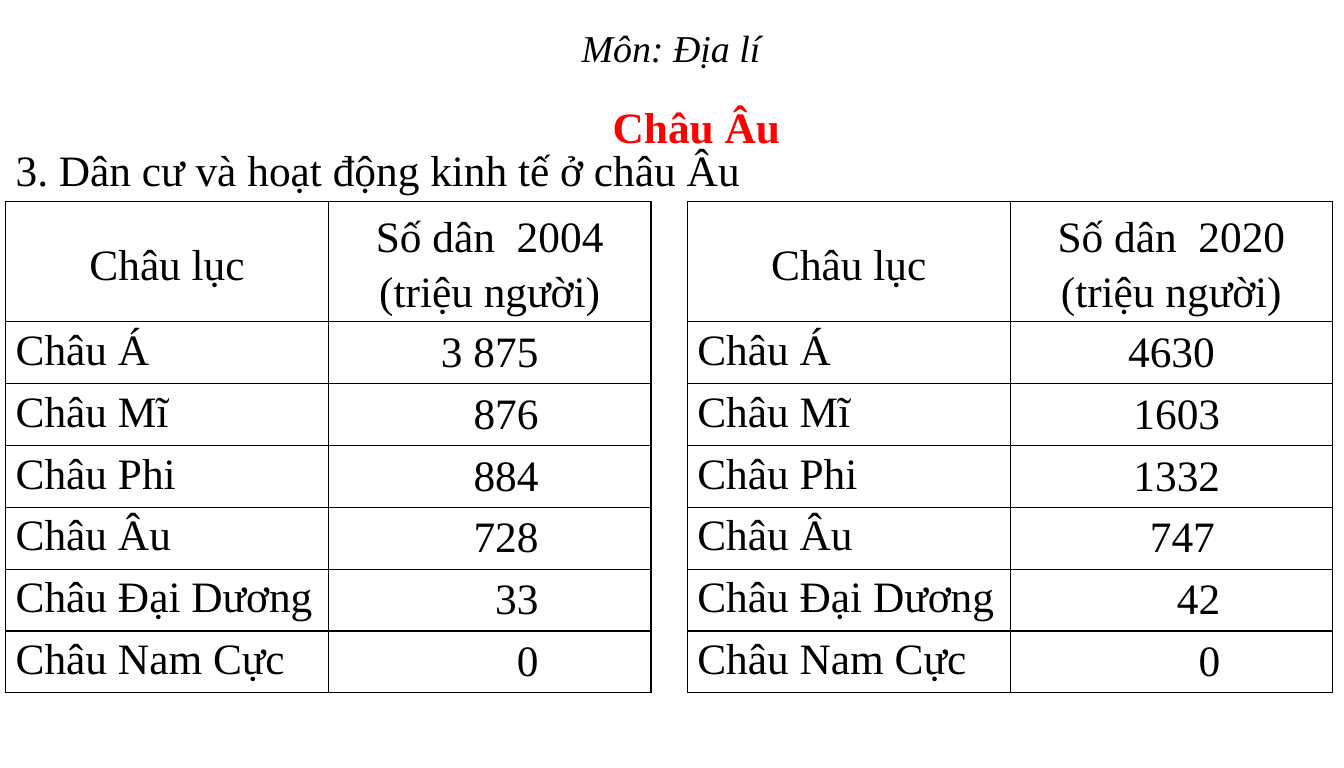
from dataclasses import dataclass
from lxml.etree import SubElement
from pptx import Presentation
from pptx.dml.color import RGBColor
from pptx.enum.text import MSO_ANCHOR, MSO_AUTO_SIZE, PP_ALIGN
from pptx.oxml.ns import qn
from pptx.util import Emu, Pt

FONT = "Times New Roman"
BLACK = "000000"
RED = "FF0000"
WIDE = Pt(992.25)
HIGH = Pt(567)
HEAD = 15.62
ROW = 8.05
COL = 24
TOP = 26.29
SLIP = 0.4
LANDS = ["Châu Á", "Châu Mĩ", "Châu Phi", "Châu Âu", "Châu Đại Dương", "Châu Nam Cực"]


@dataclass
class Box:
    left: float
    top: float
    width: float
    height: float


@dataclass
class Look:
    size: int = 32
    color: str = BLACK
    bold: bool = False
    slant: bool = False
    align: PP_ALIGN = PP_ALIGN.CENTER
    lead: float = 1.0


@dataclass
class Line:
    text: str
    box: Box
    look: Look
    anchor: MSO_ANCHOR


@dataclass
class Census:
    left: float
    head: str
    counts: list[str]
    slips: list[int]


@dataclass
class Pad:
    left: float
    top: float
    right: float


TITLE = Line("Châu Âu", Box(4.43, 12.25, 94.78, 8.38),
             Look(color=RED, bold=True), MSO_ANCHOR.TOP)
LINES = [
    Line("3. Dân cư và hoạt động kinh tế ở châu Âu", Box(0.29, 17.9, 98.84, 8.38),
         Look(align=PP_ALIGN.JUSTIFY), MSO_ANCHOR.TOP),
    Line("Môn: Địa lí", Box(0, 0, 99.85, 12.25),
         Look(size=28, slant=True), MSO_ANCHOR.MIDDLE),
]
TABLES = [
    Census(0.44, "Số dân  2004 (triệu người)",
           ["3 875", "876", "884", "728", "33", "0"], [0, 0, 0, 0, 0, 0]),
    Census(51.16, "Số dân  2020 (triệu người)",
           ["4630", "1603", "1332", "747", "42", "0"], [1, 0, 0, 1, 0, 0]),
]
HEADPAD = Pad(0.51, 0, 0.51)
LANDPAD = Pad(0.73, 0.63, 0.73)
SUMPAD = Pad(0.73, 0.63, 8.37)


def across(share: float) -> Emu:
    return Emu(round(WIDE * share / 100))


def down(share: float) -> Emu:
    return Emu(round(HIGH * share / 100))


def paint(code: str) -> RGBColor:
    return RGBColor.from_string(code)


def write(frame, text: str, look: Look) -> None:
    frame.text = text
    para = frame.paragraphs[0]
    para.alignment = look.align
    para.line_spacing = look.lead
    para.space_before = Pt(0)
    font = para.font
    font.name = FONT
    font.size = Pt(look.size)
    font.bold = look.bold
    font.italic = look.slant
    font.color.rgb = paint(look.color)


def place(shape, line: Line) -> None:
    box = line.box
    shape.left, shape.top = across(box.left), down(box.top)
    shape.width, shape.height = across(box.width), down(box.height)
    frame = shape.text_frame
    frame.word_wrap = True
    frame.auto_size = MSO_AUTO_SIZE.NONE
    frame.vertical_anchor = line.anchor
    frame.margin_left = frame.margin_right = across(0.87)
    frame.margin_top = frame.margin_bottom = down(0.76)
    write(frame, line.text, line.look)


def edge(cell) -> None:
    props = cell._tc.get_or_add_tcPr()
    for spot, side in enumerate(["lnL", "lnR", "lnT", "lnB"]):
        rule = SubElement(props, qn(f"a:{side}"), w=str(Pt(1)))
        fill = SubElement(rule, qn("a:solidFill"))
        SubElement(fill, qn("a:srgbClr"), val=BLACK)
        props.insert(spot, rule)


def enter(cell, text: str, look: Look, pad: Pad, anchor: MSO_ANCHOR) -> None:
    cell.margin_left, cell.margin_right = across(pad.left), across(pad.right)
    cell.margin_top = cell.margin_bottom = down(pad.top)
    cell.vertical_anchor = anchor
    cell.fill.background()
    write(cell.text_frame, text, look)
    edge(cell)


def tally(slide, data: Census) -> None:
    count = len(LANDS)
    frame = slide.shapes.add_table(
        count + 1, 2, across(data.left), down(TOP),
        across(2 * COL), down(HEAD + count * ROW))
    table = frame.table
    table.first_row = table.horz_banding = False
    for col in table.columns:
        col.width = across(COL)
    for spot, row in enumerate(table.rows):
        row.height = down(ROW if spot else HEAD)
    for spot, text in enumerate(["Châu lục", data.head]):
        enter(table.cell(0, spot), text, Look(lead=1.15), HEADPAD, MSO_ANCHOR.MIDDLE)
    for spot, (land, total, slip) in enumerate(zip(LANDS, data.counts, data.slips), 1):
        enter(table.cell(spot, 0), land, Look(align=PP_ALIGN.LEFT),
              LANDPAD, MSO_ANCHOR.TOP)
        pad = Pad(SUMPAD.left, SUMPAD.top, SUMPAD.right + slip * SLIP)
        enter(table.cell(spot, 1), total, Look(align=PP_ALIGN.RIGHT),
              pad, MSO_ANCHOR.MIDDLE)


def main() -> None:
    deck = Presentation()
    deck.slide_width = WIDE
    deck.slide_height = HIGH
    slide = deck.slides.add_slide(deck.slide_layouts[5])
    place(slide.shapes.title, TITLE)
    for line in LINES:
        place(slide.shapes.add_textbox(0, 0, 0, 0), line)
    for data in TABLES:
        tally(slide, data)
    deck.save("out.pptx")


if __name__ == "__main__":
    main()
